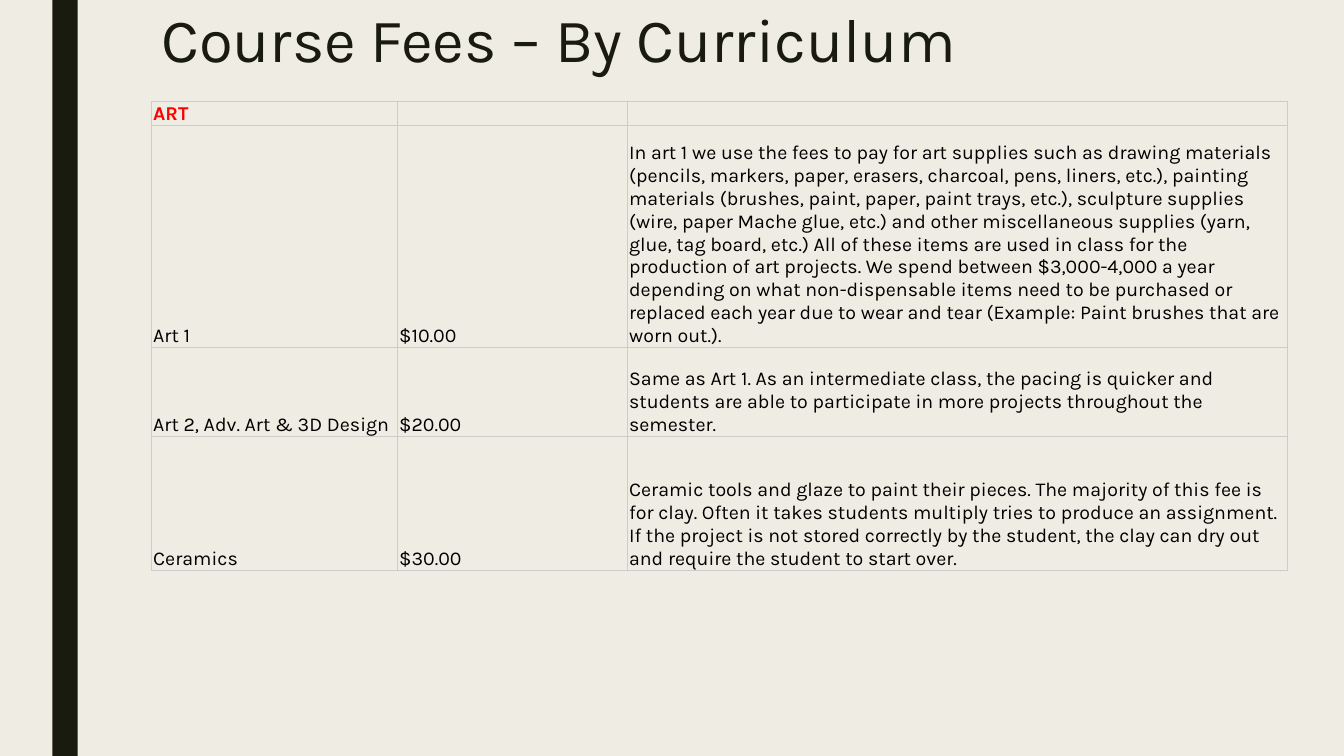
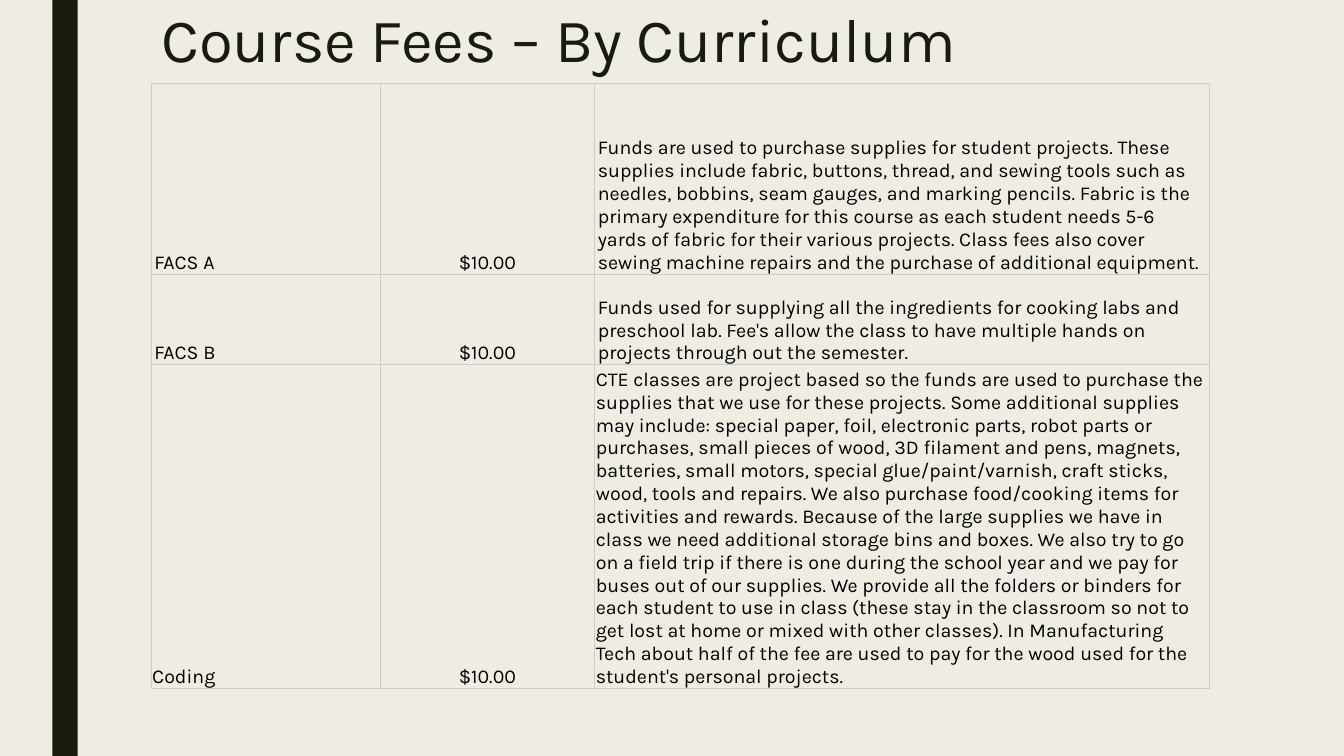
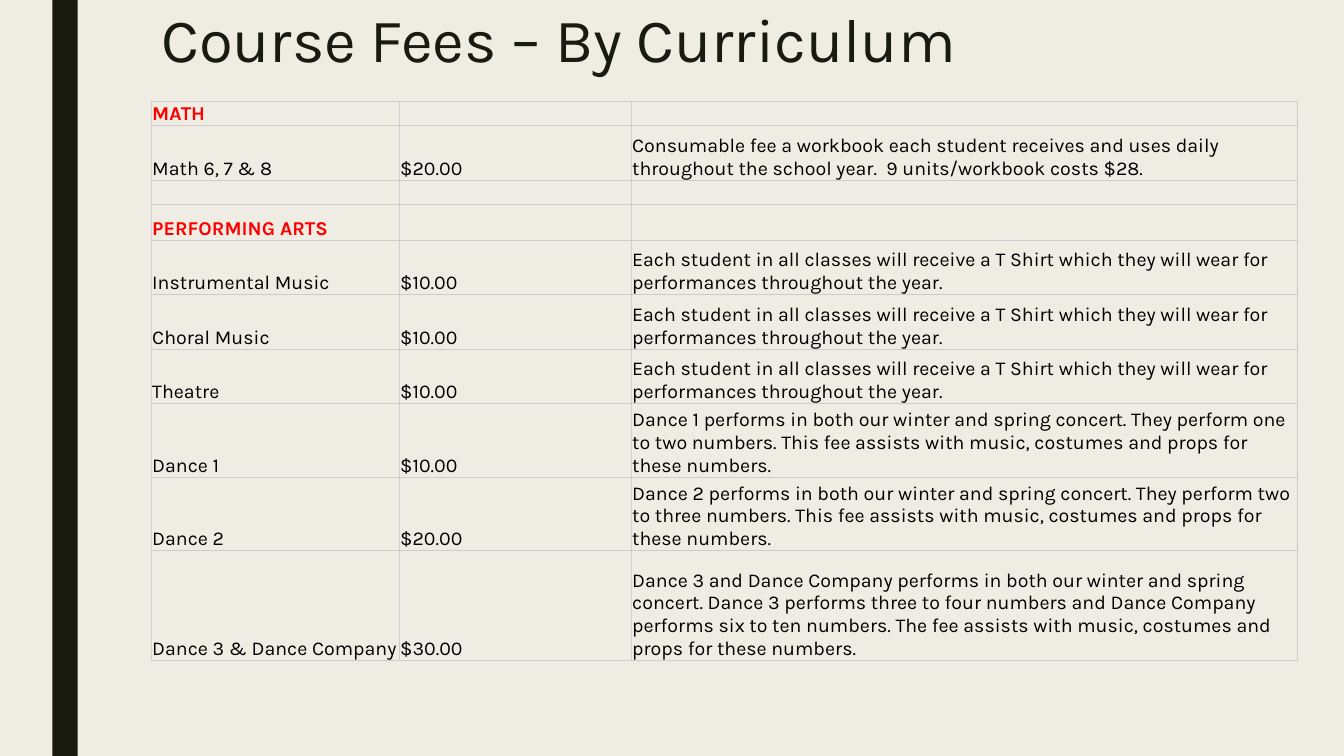
from lxml import etree
from pptx import Presentation
from pptx.dml.color import RGBColor
from pptx.enum.shapes import MSO_SHAPE as Preset
from pptx.enum.text import MSO_ANCHOR as Anchor, MSO_AUTO_SIZE as AutoSize, PP_ALIGN as Align
from pptx.oxml.ns import qn
from pptx.util import Inches, Pt

PAPER = RGBColor(0xEF, 0xED, 0xE3)
INK = RGBColor(0x19, 0x1B, 0x0E)
RULE = RGBColor(0xCC, 0xCC, 0xCC)
RED = RGBColor(0xFF, 0x00, 0x00)
BLACK = RGBColor(0x00, 0x00, 0x00)

FONT = "Karla"
TITLE = "Course Fees – By Curriculum"
TITLE_SIZE = Pt(44)
TABLE_SIZE = Pt(14)
RULE_WIDTH = Pt(0.75)
LEFT = 1.5

SHIRT = (
    "Each student in all classes will receive a T Shirt which they will wear for "
    "performances throughout the year."
)
DANCE = (
    "{0} performs in both our winter and spring concert. They perform {1} numbers. "
    "This fee assists with music, costumes and props for these numbers."
)
CODING_SENTENCES = (
    "CTE classes are project based so the funds are used to purchase the supplies "
    "that we use for these projects.",
    "Some additional supplies may include: special paper, foil, electronic parts, "
    "robot parts or purchases, small pieces of wood, 3D filament and pens, magnets, "
    "batteries, small motors, special glue/paint/varnish, craft sticks, wood, tools "
    "and repairs.",
    "We also purchase food/cooking items for activities and rewards.",
    "Because of the large supplies we have in class we need additional storage bins "
    "and boxes.",
    "We also try to go on a field trip if there is one during the school year and we "
    "pay for buses out of our supplies.",
    "We provide all the folders or binders for each student to use in class (these "
    "stay in the classroom so not to get lost at home or mixed with other classes).",
    "In Manufacturing Tech about half of the fee are used to pay for the wood used "
    "for the student's personal projects.",
)

# Each row: height, side inset, then the texts of its cells; a lone text is a heading.
ART_ROWS = [
    (0.23, 0.02, "ART"),
    (2.2, 0.02, "Art 1", "$10.00",
     "In art 1 we use the fees to pay for art supplies such as drawing materials "
     "(pencils, markers, paper, erasers, charcoal, pens, liners, etc.), painting "
     "materials (brushes, paint, paper, paint trays, etc.), sculpture supplies "
     "(wire, paper Mache glue, etc.) and other miscellaneous supplies (yarn, glue, "
     "tag board, etc.) All of these items are used in class for the production of "
     "art projects. We spend between $3,000-4,000 a year depending on what "
     "non-dispensable items need to be purchased or replaced each year due to wear "
     "and tear (Example: Paint brushes that are worn out.)."),
    (0.88, 0.02, "Art 2, Adv. Art & 3D Design", "$20.00",
     "Same as Art 1. As an intermediate class, the pacing is quicker and students "
     "are able to participate in more projects throughout the semester."),
    (1.33, 0.02, "Ceramics", "$30.00",
     "Ceramic tools and glaze to paint their pieces. The majority of this fee is for "
     "clay. Often it takes students multiply tries to produce an assignment. If the "
     "project is not stored correctly by the student, the clay can dry out and "
     "require the student to start over."),
]
CAREER_ROWS = [
    (1.89, 0.03, "FACS A", "$10.00",
     "Funds are used to purchase supplies for student projects. These supplies "
     "include fabric, buttons, thread, and sewing tools such as needles, bobbins, "
     "seam gauges, and marking pencils. Fabric is the primary expenditure for this "
     "course as each student needs 5-6 yards of fabric for their various projects. "
     "Class fees also cover sewing machine repairs and the purchase of additional "
     "equipment."),
    (0.9, 0.03, "FACS B", "$10.00",
     "Funds used for supplying all the ingredients for cooking labs and preschool "
     "lab. Fee's allow the class to have multiple hands on projects through out the "
     "semester."),
    (3.21, 0.01, "Coding", "$10.00", " ".join(CODING_SENTENCES)),
]
MATH_AND_STAGE_ROWS = [
    (0.23, 0.01, "MATH"),
    (0.54, 0.01, "Math 6, 7 & 8", "$20.00",
     "Consumable fee a workbook each student receives and uses daily throughout the "
     "school year.  9 units/workbook costs $28."),
    (0.23, 0.01),
    (0.36, 0.01, "PERFORMING ARTS"),
    *((0.54, 0.01, course, "$10.00", SHIRT)
      for course in ("Instrumental Music", "Choral Music", "Theatre")),
    (0.73, 0.01, "Dance 1", "$10.00", DANCE.format("Dance 1", "one to two")),
    (0.73, 0.01, "Dance 2", "$20.00", DANCE.format("Dance 2", "two to three")),
    (1.09, 0.01, "Dance 3 & Dance Company", "$30.00",
     "Dance 3 and Dance Company performs in both our winter and spring concert. "
     "Dance 3 performs three to four numbers and Dance Company performs six to ten "
     "numbers. The fee assists with music, costumes and props for these numbers."),
]

# Each page: table top, column widths, alignment of the fees, rows.
PAGES = [
    (1.01, (2.44, 2.28, 6.55), Align.LEFT, ART_ROWS),
    (0.83, (2.27, 2.13, 6.1), Align.CENTER, CAREER_ROWS),
    (1.01, (2.46, 2.3, 6.61), Align.LEFT, MATH_AND_STAGE_ROWS),
]


def style_master(deck, layout, first_page):
    """Give every slide the paper colour, the side bar and the title's place."""
    master = deck.slide_master
    master.background.fill.solid()
    master.background.fill.fore_color.rgb = PAPER

    # Master shapes cannot be added directly, so the bar is moved there from a page.
    bar = first_page.shapes.add_shape(
        Preset.RECTANGLE, Inches(0.52), 0, Inches(0.25), deck.slide_height)
    bar.shadow.inherit = False
    bar.fill.solid()
    bar.fill.fore_color.rgb = INK
    bar.line.fill.background()
    master.shapes._spTree.insert(2, bar._element)

    title = layout.placeholders[0]
    title.left, title.top = Inches(LEFT), 0
    title.width, title.height = Inches(10.5), Inches(1.01)


def add_title(page, text):
    frame = page.shapes.title.text_frame
    frame.text = text
    frame.auto_size = AutoSize.NONE
    frame.vertical_anchor = Anchor.TOP
    frame.margin_top = Inches(0.1)
    para = frame.paragraphs[0]
    para.alignment = Align.LEFT
    para.line_spacing = 0.89
    font = para.runs[0].font
    font.name, font.size, font.color.rgb = FONT, TITLE_SIZE, INK


def draw_borders(cell):
    properties = cell._tc.get_or_add_tcPr()
    for index, side in enumerate(("a:lnL", "a:lnR", "a:lnT", "a:lnB")):
        line = etree.Element(qn(side), w=str(int(RULE_WIDTH)))
        fill = etree.SubElement(line, qn("a:solidFill"))
        etree.SubElement(fill, qn("a:srgbClr"), val=str(RULE))
        properties.insert(index, line)


def fill_cell(cell, text, inset, alignment, heading):
    cell.fill.background()
    draw_borders(cell)
    cell.vertical_anchor = Anchor.BOTTOM
    cell.margin_left = cell.margin_right = Inches(inset)
    cell.margin_top = cell.margin_bottom = 0
    para = cell.text_frame.paragraphs[0]
    para.alignment = alignment
    if not text:
        # Keeps an empty row as low as one line of table text.
        para._p.get_or_add_endParaRPr().set("sz", str(int(TABLE_SIZE.pt * 100)))
        return
    para.text = text
    font = para.runs[0].font
    font.name, font.size, font.bold = FONT, TABLE_SIZE, heading
    font.color.rgb = RED if heading else BLACK


def add_fee_table(page, left, top, widths, fee_alignment, rows):
    height = sum(row[0] for row in rows)
    table = page.shapes.add_table(
        len(rows), len(widths), Inches(left), Inches(top),
        Inches(sum(widths)), Inches(height)).table
    table.first_row = table.horz_banding = False
    for column, width in zip(table.columns, widths):
        column.width = Inches(width)
    alignments = (Align.LEFT, fee_alignment, Align.LEFT)
    for table_row, (row_height, inset, *texts) in zip(table.rows, rows):
        table_row.height = Inches(row_height)
        heading = len(texts) == 1
        texts += [""] * (len(widths) - len(texts))
        for cell, text, alignment in zip(table_row.cells, texts, alignments):
            fill_cell(cell, text, inset, alignment, heading)


def main():
    deck = Presentation()
    deck.slide_width, deck.slide_height = Inches(13.33), Inches(7.5)
    layout = deck.slide_layouts.get_by_name("Title Only")
    for top, widths, fee_alignment, rows in PAGES:
        page = deck.slides.add_slide(layout)
        add_title(page, TITLE)
        add_fee_table(page, LEFT, top, widths, fee_alignment, rows)
    style_master(deck, layout, deck.slides[0])
    deck.save("out.pptx")


if __name__ == "__main__":
    main()
